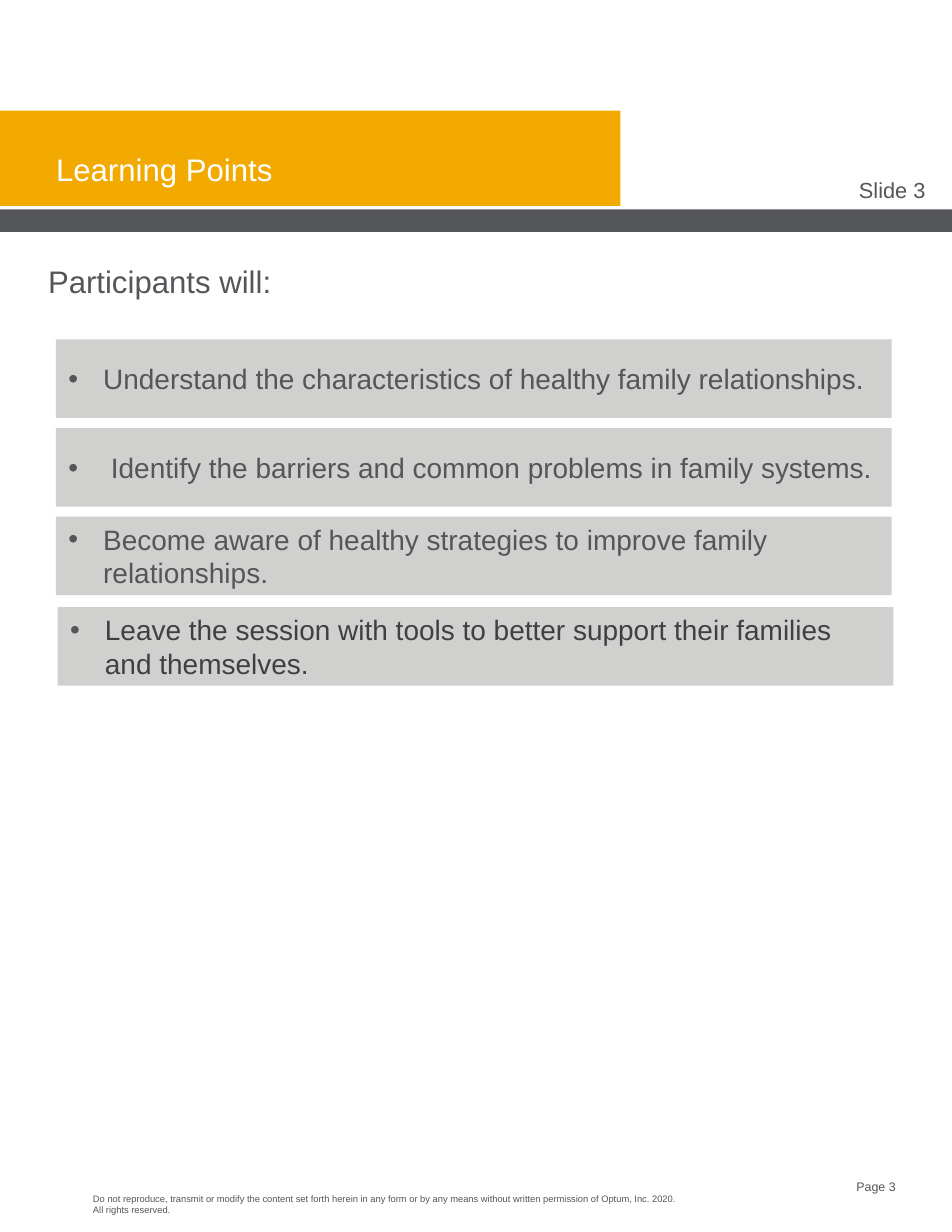
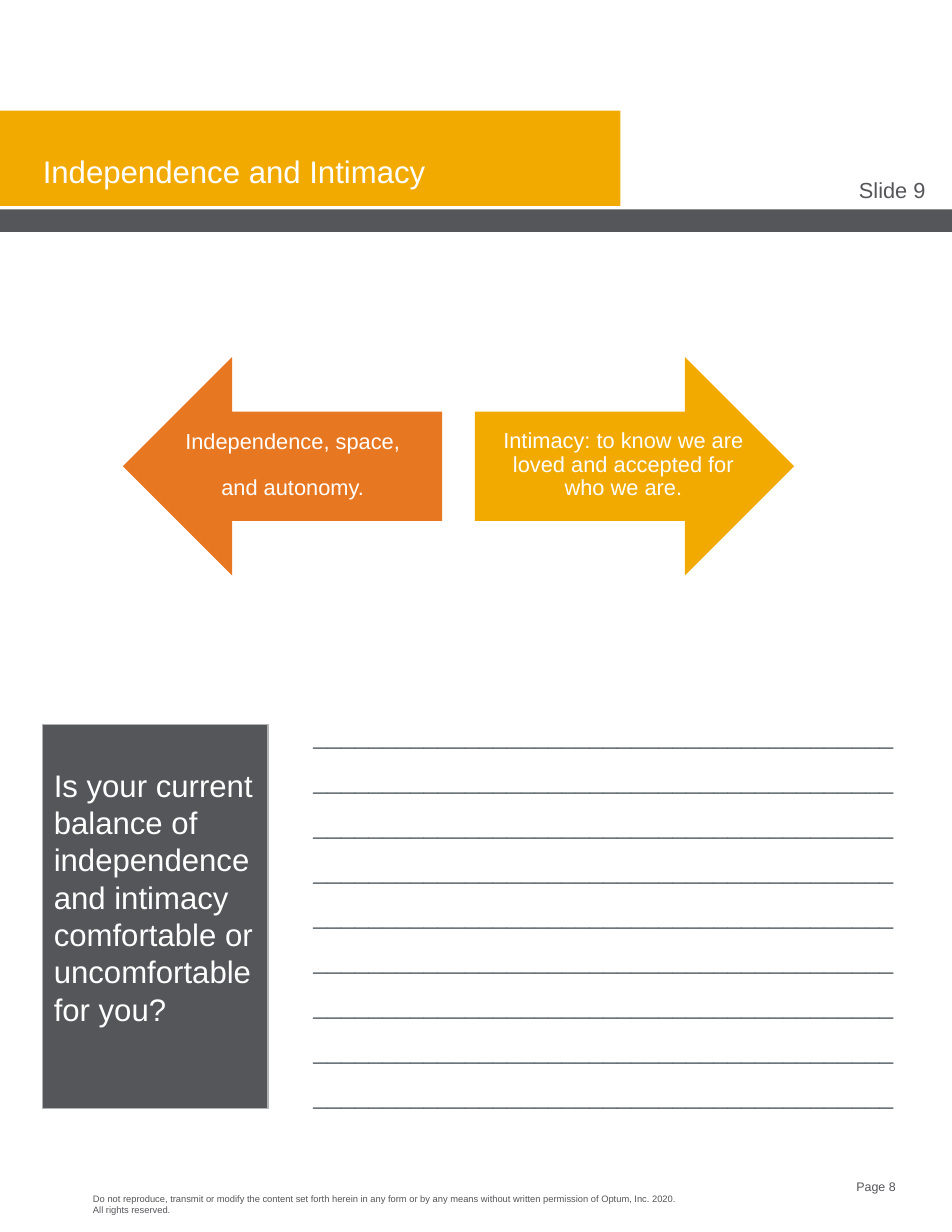
import dataclasses

import pptx
import pptx.dml.color
import pptx.enum.shapes
import pptx.enum.text
import pptx.oxml
import pptx.oxml.ns
import pptx.util

Cm = pptx.util.Cm
Pt = pptx.util.Pt
Shape = pptx.enum.shapes.MSO_SHAPE
Align = pptx.enum.text.PP_ALIGN
Anchor = pptx.enum.text.MSO_ANCHOR


@dataclasses.dataclass(frozen=True)
class Theme:
    font: str = "Arial"
    gold: str = "F2AA00"
    orange: str = "E87722"
    slate: str = "55565A"
    dark: str = "404044"
    pale: str = "D0D0CE"
    edge: str = "B1B3B3"
    rule: str = "646D72"
    white: str = "FFFFFF"
    head: int = 20
    point: int = 18
    notes: int = 16
    label: int = 14
    page: int = 8
    legal: int = 6


THEME = Theme()
LEGAL = ("Do not reproduce, transmit or modify the content set forth herein in any "
         "form or by any means without written permission of Optum, Inc. 2020. "
         "All rights reserved.")
POINTS = [
    "Understand the characteristics of healthy family relationships.",
    " Identify the barriers and common problems in family systems.",
    "Become aware of healthy strategies to improve family relationships.",
    "Leave the session with tools to better support their families and themselves.",
]


def rgb(code):
    return pptx.dml.color.RGBColor.from_string(code)


def place(item, left, top, width, height):
    item.left, item.top = Cm(left), Cm(top)
    item.width, item.height = Cm(width), Cm(height)


def fill_text(item, lines, size, color, align=Align.LEFT, anchor=Anchor.TOP,
              inset=(0, 0), lead=None, after=0):
    """Set one paragraph per line; inset is (sides, top and bottom) in cm."""
    frame = item.text_frame
    frame.word_wrap = True
    frame.auto_size = pptx.enum.text.MSO_AUTO_SIZE.NONE
    frame.vertical_anchor = anchor
    frame.margin_left = frame.margin_right = Cm(inset[0])
    frame.margin_top = frame.margin_bottom = Cm(inset[1])
    frame.text = "\n".join(lines)
    for par in frame.paragraphs:
        par.alignment = align
        par.space_before = Pt(0)
        par.space_after = Pt(after)
        if lead:
            par.line_spacing = lead
        for run in par.runs:
            run.font.name = THEME.font
            run.font.size = Pt(size)
            run.font.color.rgb = rgb(color)


def add_text(slide, box, lines, size, color, **style):
    item = slide.shapes.add_textbox(*map(Cm, box))
    fill_text(item, lines, size, color, **style)


def add_block(slide, kind, box, color, edge=None):
    item = slide.shapes.add_shape(kind, *map(Cm, box))
    item.shadow.inherit = False
    item.fill.solid()
    item.fill.fore_color.rgb = rgb(color)
    if edge:
        item.line.color.rgb = rgb(edge)
        item.line.width = Pt(0.75)
    else:
        item.line.fill.background()
    return item


def add_point(slide, box, text, color):
    item = add_block(slide, Shape.RECTANGLE, box, THEME.pale)
    fill_text(item, [text], THEME.point, color, anchor=Anchor.MIDDLE,
              inset=(0.28, 0.25))
    props = item.text_frame.paragraphs[0]._p.get_or_add_pPr()
    props.set("marL", str(Cm(0.79)))
    props.set("indent", str(-Cm(0.79)))
    space = pptx.oxml.ns.nsdecls("a")
    for mark in (f'<a:buClr {space}><a:srgbClr val="{THEME.slate}"/></a:buClr>',
                 f'<a:buFont {space} typeface="{THEME.font}"/>',
                 f'<a:buChar {space} char="•"/>'):
        props.append(pptx.oxml.parse_xml(mark))


def add_page(deck, title, left, top, number, page):
    """Add a slide with the shared bands, title, labels and footer."""
    slide = deck.slides.add_slide(deck.slide_layouts[5])
    add_block(slide, Shape.RECTANGLE, (0, 2.51, 14.07, 2.16), THEME.gold)
    add_block(slide, Shape.RECTANGLE, (0, 4.75, 21.59, 0.51), THEME.slate)
    head = slide.shapes.title
    head._element.getparent().append(head._element)  # in front of the bands
    place(head, left, top, 12.5, 0.8)
    fill_text(head, [title], THEME.head, THEME.white, lead=0.9)
    add_text(slide, (19.48, 4.01, 2.1, 0.61), [f"Slide {number}"],
             THEME.label, THEME.slate)
    add_text(slide, (18.26, 26.75, 2.06, 0.33), [f"Page {page}"],
             THEME.page, THEME.slate, align=Align.RIGHT)
    add_text(slide, (2.11, 27.05, 13.46, 0.51), [LEGAL], THEME.legal, THEME.slate)
    return slide


def add_arrow(slide, kind, left, color, box, lines, after=0):
    add_block(slide, kind, (left, 8.1, 7.24, 4.95), color)
    add_text(slide, box, lines, THEME.label, THEME.white, align=Align.CENTER,
             anchor=Anchor.MIDDLE, lead=0.9, after=after)


def build_points(deck):
    slide = add_page(deck, "Learning Points", 1.27, 3.51, 3, 3)
    add_text(slide, (1.09, 5.94, 19.02, 0.86), ["Participants will:"],
             THEME.head, THEME.slate)
    for row, text in enumerate(POINTS):
        last = row == len(POINTS) - 1
        shift = 0.04 if last else 0
        add_point(slide, (1.27 + shift, 7.7 + row * 2.01 + shift, 18.95, 1.78),
                  text, THEME.dark if last else THEME.slate)


def build_balance(deck):
    slide = add_page(deck, "Independence and Intimacy", 0.97, 3.56, 9, 8)
    add_arrow(slide, Shape.LEFT_ARROW, 2.79, THEME.orange, (4.14, 9.07, 5, 2.97),
              ["Independence, space,", "and autonomy."], after=14.5)
    add_arrow(slide, Shape.RIGHT_ARROW, 10.77, THEME.gold, (11.18, 9.07, 5.92, 2.97),
              ["Intimacy: to know we are loved and accepted for who we are."])
    add_block(slide, Shape.RECTANGLE, (0.97, 16.43, 5.11, 8.71), THEME.slate,
              THEME.edge)
    add_text(slide, (1.22, 17.37, 4.88, 5.99),
             ["Is your current balance of independence and intimacy "
              "comfortable or uncomfortable for you?"], THEME.head, THEME.white)
    add_text(slide, (6.83, 16.05, 13.87, 10.39), ["_" * 42] * 9,
             THEME.notes, THEME.rule, inset=(0.28, 0.28), after=9.7)


def main():
    deck = pptx.Presentation()
    deck.slide_width, deck.slide_height = Cm(21.59), Cm(27.94)
    build_points(deck)
    build_balance(deck)
    deck.save("out.pptx")


if __name__ == "__main__":
    main()
